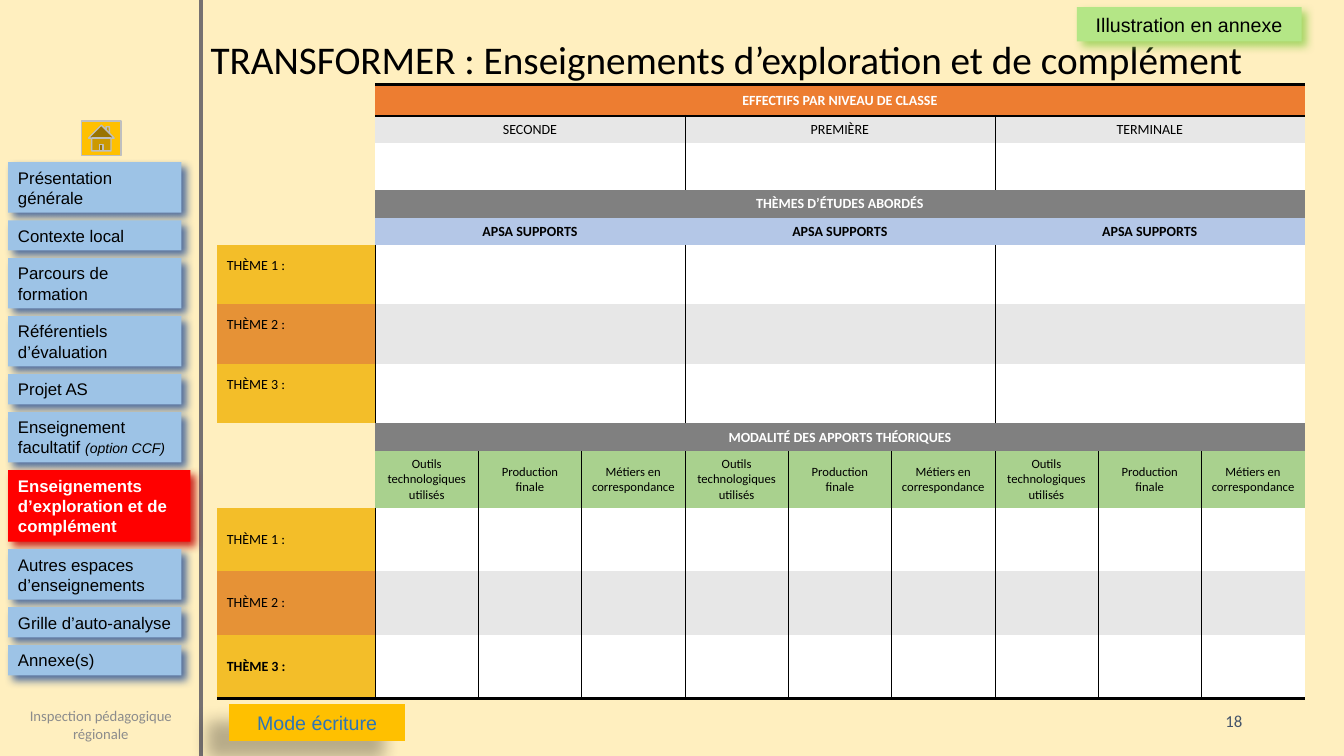
from dataclasses import dataclass

from lxml.etree import SubElement
from pptx import Presentation
from pptx.dml.color import RGBColor
from pptx.enum.shapes import MSO_CONNECTOR, MSO_SHAPE
from pptx.enum.text import MSO_ANCHOR as Anchor, PP_ALIGN as Align
from pptx.oxml.ns import qn
from pptx.util import Inches, Pt

CREAM = RGBColor(0xFF, 0xEF, 0xBF)
BLACK = RGBColor(0, 0, 0)
WHITE = RGBColor(0xFF, 0xFF, 0xFF)
GOLD = RGBColor(0xFF, 0xC0, 0x00)
RED = RGBColor(0xFF, 0, 0)
DARK_RED = RGBColor(0xC0, 0, 0)
SKY = RGBColor(0x9D, 0xC3, 0xE6)
NAVY = RGBColor(0x2F, 0x55, 0x97)
LINK_BLUE = RGBColor(0x2E, 0x75, 0xB6)
LIME = RGBColor(0xB4, 0xE6, 0x86)
GREEN = RGBColor(0x92, 0xD0, 0x50)
RULE_GRAY = RGBColor(0x76, 0x71, 0x71)
ICON_GRAY = RGBColor(0xBF, 0xBF, 0xBF)
FOOTER_GRAY = RGBColor(0x8C, 0x8C, 0x8C)
SLATE = RGBColor(0x44, 0x54, 0x6A)
ORANGE = RGBColor(0xED, 0x7D, 0x31)
BAND_GRAY = RGBColor(0x80, 0x80, 0x80)
PALE_GRAY = RGBColor(0xE7, 0xE7, 0xE7)
PERIWINKLE = RGBColor(0xB4, 0xC7, 0xE7)
SAGE = RGBColor(0xA9, 0xD1, 0x8E)
AMBER = RGBColor(0xF3, 0xBE, 0x29)
COPPER = RGBColor(0xE6, 0x92, 0x36)
NO_STYLE = "{2D5ABB26-0587-4C30-8999-92F81FD0307C}"


@dataclass
class Shadow:
    color: RGBColor
    alpha: int = 84
    blur: float = 6
    distance: float = 5
    angle: int = 45


@dataclass
class Label:
    text: str
    size: float
    color: RGBColor = BLACK
    font: str = "Arial"
    bold: bool = False
    align: Align = Align.LEFT
    anchor: Anchor = Anchor.MIDDLE
    aside: str = ""


@dataclass
class Button:
    box: tuple
    fill: RGBColor
    label: Label
    shadow: Shadow
    kind: MSO_SHAPE = MSO_SHAPE.RECTANGLE


@dataclass
class MenuEntry:
    text: str
    height: float
    aside: str = ""
    current: bool = False


@dataclass
class Row:
    height: float
    fill: RGBColor
    span: int
    texts: tuple = ()
    theme: str = ""
    theme_fill: RGBColor = AMBER
    theme_bold: bool = False
    theme_bottom: float = 0.05
    color: RGBColor = BLACK
    bold: bool = False
    size: float = 10
    divided: bool = True


def write(frame, label: Label) -> None:
    frame.word_wrap = True
    paragraph = frame.paragraphs[0]
    paragraph.alignment = label.align
    base = {"name": label.font, "size": Pt(label.size), "bold": label.bold}
    pieces = [(label.text, base)]
    if label.aside:
        pieces.append((label.aside, base | {"size": Pt(10), "italic": True}))
    for text, formats in pieces:
        run = paragraph.add_run()
        run.text = text
        for key, value in formats.items():
            setattr(run.font, key, value)
        run.font.color.rgb = label.color


def add_effects(item, shadow: Shadow | None = None) -> None:
    effects = SubElement(item._element.spPr, qn("a:effectLst"))
    if shadow:
        outer = SubElement(effects, qn("a:outerShdw"), blurRad=str(Pt(shadow.blur)),
                           dist=str(Pt(shadow.distance)), dir=str(shadow.angle * 60000),
                           algn="ctr", rotWithShape="0")
        tint = SubElement(outer, qn("a:srgbClr"), val=str(shadow.color))
        SubElement(tint, qn("a:alpha"), val=str(shadow.alpha * 1000))


def draw_text(shapes, box: tuple, label: Label) -> None:
    frame = shapes.add_textbox(*map(Inches, box)).text_frame
    frame.vertical_anchor = label.anchor
    write(frame, label)


def draw_button(shapes, button: Button) -> None:
    shape = shapes.add_shape(button.kind, *map(Inches, button.box))
    shape.fill.solid()
    shape.fill.fore_color.rgb = button.fill
    shape.line.fill.background()
    add_effects(shape, button.shadow)
    shape.text_frame.vertical_anchor = button.label.anchor
    write(shape.text_frame, button.label)


def draw_menu(shapes, entries: list[MenuEntry], top: float, bottom: float) -> None:
    gap = (bottom - top - sum(e.height for e in entries)) / (len(entries) - 1)
    for entry in entries:
        fill, ink, shade, width = (RED, WHITE, DARK_RED, 1.81) if entry.current else (SKY, BLACK, NAVY, 1.72)
        label = Label(entry.text, 12, ink, bold=entry.current, aside=entry.aside)
        draw_button(shapes, Button((0.08, top, width, entry.height), fill, label, Shadow(shade)))
        top += entry.height + gap


def add_borders(cell, widths: dict[str, float]) -> None:
    properties = cell._tc.get_or_add_tcPr()
    for side in "LRTB":
        if side in widths:
            line = SubElement(properties, qn(f"a:ln{side}"), w=str(Pt(widths[side])))
            SubElement(SubElement(line, qn("a:solidFill")), qn("a:srgbClr"), val=str(BLACK))


def borders_at(rows: list[Row], index: int, column: int) -> dict[str, float]:
    row = rows[index]
    widths = {}
    for side, edge in (("L", column), ("R", column + 1)):
        inner = row.divided and 1 < edge < 10 and (edge - 1) % row.span == 0
        if inner or (row.theme and edge == 1):
            widths[side] = 0.25
    if column and index == 0:
        widths["T"] = 2
    if (column and index == 0) or index == len(rows) - 1:
        widths["B"] = 2
    return widths


def draw_table(shapes, rows: list[Row], box: tuple) -> None:
    table = shapes.add_table(len(rows), 10, *map(Inches, box)).table
    table.first_row = table.horz_banding = False
    table._tbl.tblPr.find(qn("a:tableStyleId")).text = NO_STYLE
    for column, part in enumerate(table.columns):
        part.width = Inches((box[2] - 1.57) / 9 if column else 1.57)
    for index, row in enumerate(rows):
        table.rows[index].height = Inches(row.height)
        for column in range(10):
            cell = table.cell(index, column)
            SubElement(cell.text_frame.paragraphs[0]._p, qn("a:endParaRPr"), sz=str(row.size * 100))
            add_borders(cell, borders_at(rows, index, column))
            cell.vertical_anchor = Anchor.MIDDLE
            if column or row.theme:
                cell.fill.solid()
                cell.fill.fore_color.rgb = row.fill if column else row.theme_fill
            else:
                cell.fill.background()
        if row.theme:
            theme = table.cell(index, 0)
            theme.margin_bottom = Inches(row.theme_bottom)
            write(theme.text_frame, Label(row.theme, 10, font="Calibri", bold=row.theme_bold))
        for block, column in enumerate(range(1, 10, row.span)):
            cell = table.cell(index, column)
            if row.span > 1:
                cell.merge(table.cell(index, column + row.span - 1))
            if row.texts:
                cell.margin_left = cell.margin_right = Inches(0.09)
                write(cell.text_frame, Label(row.texts[block], row.size, row.color, "Calibri", row.bold, Align.CENTER))


MENU = [
    MenuEntry("Présentation générale", 0.5),
    MenuEntry("Contexte local", 0.3),
    MenuEntry("Parcours de formation", 0.5),
    MenuEntry("Référentiels d’évaluation", 0.5),
    MenuEntry("Projet AS", 0.3),
    MenuEntry("Enseignement facultatif ", 0.5, aside="(option CCF)"),
    MenuEntry("Enseignements d’exploration et de complément", 0.71, current=True),
    MenuEntry("Autres espaces d’enseignements", 0.5),
    MenuEntry("Grille d’auto-analyse", 0.3),
    MenuEntry("Annexe(s)", 0.3),
]
THEMES = [("THÈME 1 :", WHITE, AMBER), ("THÈME 2 :", PALE_GRAY, COPPER), ("THÈME 3 :", WHITE, AMBER)]
CONTRIBUTIONS = ("Outils technologiques utilisés", "Production finale", "Métiers en correspondance")
ROWS = [
    Row(0.31, ORANGE, 9, ("EFFECTIFS PAR NIVEAU DE CLASSE",), color=WHITE, bold=True),
    Row(0.27, PALE_GRAY, 3, ("SECONDE", "PREMIÈRE", "TERMINALE")),
    Row(0.47, WHITE, 3),
    Row(0.27, BAND_GRAY, 9, ("THÈMES D’ÉTUDES ABORDÉS",), color=WHITE, bold=True),
    Row(0.27, PERIWINKLE, 3, ("APSA SUPPORTS",) * 3, bold=True, divided=False),
    *(Row(0.59, fill, 3, theme=name, theme_fill=tone, theme_bottom=0.23) for name, fill, tone in THEMES),
    Row(0.28, BAND_GRAY, 9, ("MODALITÉ DES APPORTS THÉORIQUES",), color=WHITE, bold=True),
    Row(0.56, SAGE, 1, CONTRIBUTIONS * 3, size=9),
    *(Row(0.63, fill, 1, theme=name, theme_fill=tone, theme_bold=name == "THÈME 3 :") for name, fill, tone in THEMES),
]


def main() -> None:
    deck = Presentation()
    deck.slide_width, deck.slide_height = Inches(13.33), Inches(7.5)
    slide = deck.slides.add_slide(deck.slide_layouts[6])
    slide.background.fill.solid()
    slide.background.fill.fore_color.rgb = CREAM
    shapes = slide.shapes
    divider = shapes.add_connector(MSO_CONNECTOR.STRAIGHT, Inches(1.99), 0, Inches(1.99), Inches(7.5))
    divider.line.color.rgb, divider.line.width = RULE_GRAY, Pt(3)
    add_effects(divider)
    draw_text(shapes, (1.99, 0.3, 10.92, 0.57), Label("TRANSFORMER : Enseignements d’exploration et de complément", 28, font="Calibri", anchor=Anchor.TOP))
    home = shapes.add_shape(MSO_SHAPE.ACTION_BUTTON_HOME, *map(Inches, (0.81, 1.2, 0.39, 0.34)))
    home.shadow.inherit = False
    home.fill.solid()
    home.fill.fore_color.rgb = GOLD
    home.line.color.rgb, home.line.width = ICON_GRAY, Pt(1)
    draw_menu(shapes, MENU, 1.61, 6.7)
    draw_button(shapes, Button((2.27, 6.98, 1.75, 0.37), GOLD, Label("Mode écriture", 14, LINK_BLUE, align=Align.CENTER), Shadow(BLACK, 28, 11.8, 19.7, 141), MSO_SHAPE.ACTION_BUTTON_CUSTOM))
    draw_button(shapes, Button((10.68, 0.07, 2.23, 0.34), LIME, Label("Illustration en annexe", 14, align=Align.CENTER), Shadow(GREEN, 80)))
    draw_text(shapes, (0.14, 7.02, 1.72, 0.34), Label("Inspection pédagogique régionale", 10.5, FOOTER_GRAY, "Calibri", align=Align.CENTER))
    draw_text(shapes, (11.94, 6.95, 0.48, 0.4), Label("18", 12, SLATE, "Calibri", align=Align.RIGHT))
    draw_table(shapes, ROWS, (2.15, 0.84, 10.79, 6.07))
    deck.save("out.pptx")


if __name__ == "__main__":
    main()
